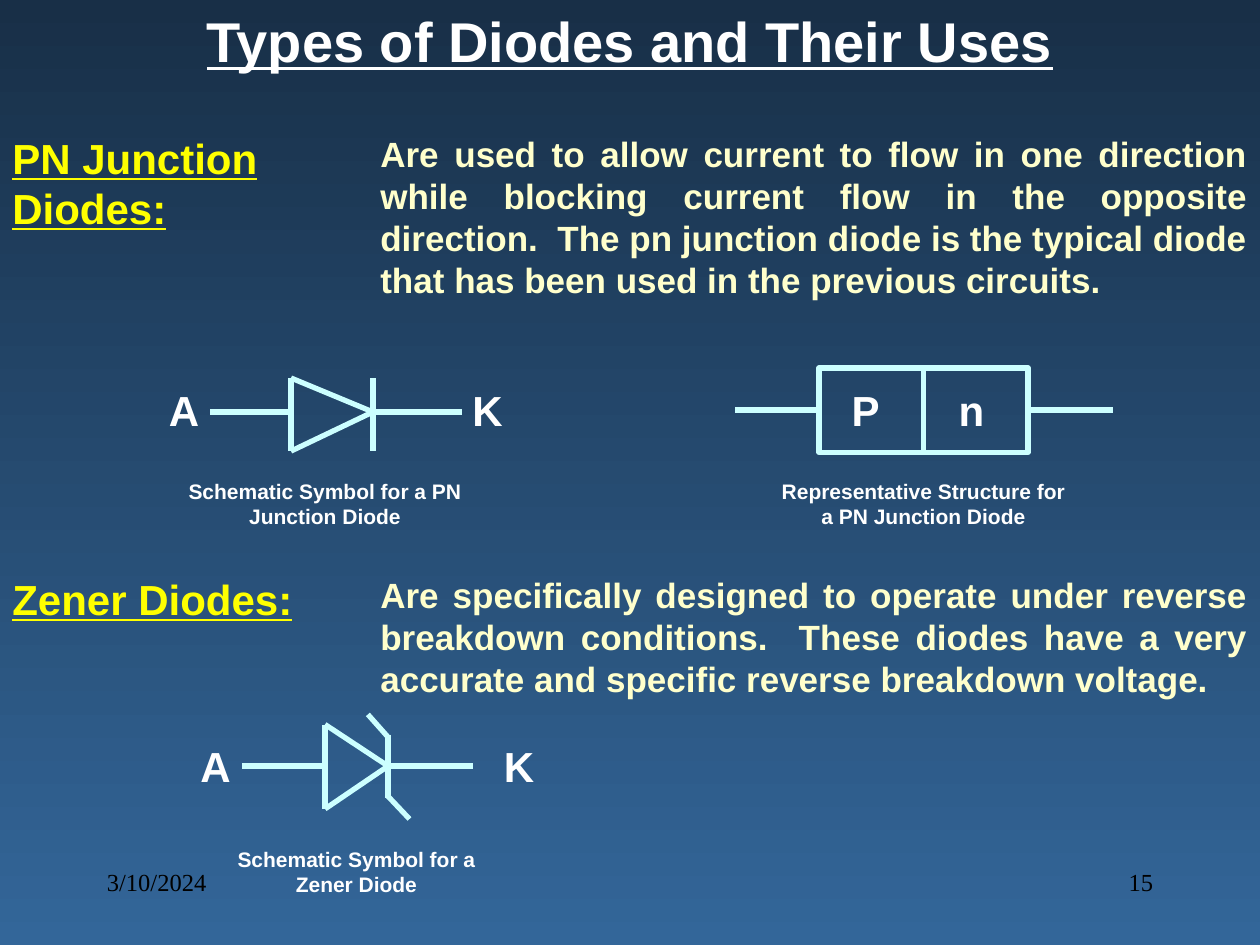
from pptx import Presentation
from pptx.dml.color import RGBColor
from pptx.enum.shapes import MSO_CONNECTOR as Conn, MSO_SHAPE as Shape
from pptx.enum.text import MSO_ANCHOR as Anchor, MSO_AUTO_SIZE as Auto, PP_ALIGN as Al
from pptx.oxml.ns import qn
from pptx.util import Inches, Pt
from lxml.etree import SubElement

WHITE, YELLOW, CREAM, CYAN, BLACK = "FFFFFF", "FFFF00", "FFFFCC", "CCFFFF", "000000"

# Content
TITLE = "Types of Diodes and Their Uses"
TYPES = [  # top, heading, heading height, text, text height
    (1, "PN Junction Diodes:", 0.9,
     "Are used to allow current to flow in one direction while blocking current "
     "flow in the opposite direction.  The pn junction diode is the typical diode "
     "that has been used in the previous circuits.", 1.43),
    (4.5, "Zener Diodes:", 0.5,
     "Are specifically designed to operate under reverse breakdown conditions.  "
     "These diodes have a very accurate and specific reverse breakdown voltage.", 1.1),
]
LABELS = [("A", 1.17, 3), ("K", 3.58, 3), ("P", 6.58, 3), ("n", 7.42, 3),
          ("A", 1.42, 5.83), ("K", 3.83, 5.83)]
CAPTIONS = [("Schematic Symbol for a PN Junction Diode", 1.33, 3.75),
            ("Representative Structure for a PN Junction Diode", 6.08, 3.75),
            ("Schematic Symbol for a Zener Diode", 1.58, 6.67)]
FOOTER = [("3/10/2024", 0.75, Al.LEFT), ("15", 7.17, Al.RIGHT)]

# Diode symbols: wire start, base, tip, wire end; base top, axis, base bottom; bar top, bar bottom
PN = (1.67, 2.31, 2.96, 3.67), (3, 3.27, 3.58), (3, 3.58)
ZENER = (1.92, 2.58, 3.08, 3.75), (5.75, 6.08, 6.42), (5.83, 6.33)
HOOKS = [((3.08, 5.85), (2.92, 5.67)), ((3.25, 6.5), (3.07, 6.31))]
CELL = 6.5, 2.92, 0.83, 0.67
LEAD = 0.67


def color(code):
    return RGBColor.from_string(code)


def write(text, x, y, w, h, shape=None, size=24, tint=WHITE, bold=True,
          under=False, align=Al.CENTER, font="Arial"):
    box = shape or slide.shapes.add_textbox(0, 0, 0, 0)
    box.left, box.top, box.width, box.height = map(Inches, (x, y, w, h))
    frame = box.text_frame
    frame.word_wrap = True
    frame.auto_size = Auto.NONE
    frame.vertical_anchor = Anchor.TOP
    par = frame.paragraphs[0]
    par.alignment = align
    run = par.add_run()
    run.text = text
    face = run.font
    face.name, face.size, face.bold, face.underline = font, Pt(size), bold, under
    face.color.rgb = color(tint)


def stroke(item):
    item.line.color.rgb = color(CYAN)
    item.line.width = Pt(3)


def wire(x1, y1, x2, y2, shapes):
    line = shapes.add_connector(Conn.STRAIGHT, *map(Inches, (x1, y1, x2, y2)))
    stroke(line)
    SubElement(line._element.spPr, qn("a:effectLst"))
    return line


def outline(shape):
    shape.shadow.inherit = False
    shape.fill.background()
    stroke(shape)
    return shape


def diode(xs, ys, bar, shapes):
    start, base, tip, end = xs
    top, mid, low = ys
    for ends in [(start, mid, base, mid), (base, top, base, low),
                 (base, top, tip, mid), (base, low, tip, mid),
                 (tip, mid, end, mid), (tip, bar[0], tip, bar[1])]:
        wire(*ends, shapes)


deck = Presentation()
deck.slide_width, deck.slide_height = Inches(10), Inches(7.5)
slide = deck.slides.add_slide(deck.slide_layouts[5])

# Background
fill = slide.background.fill
fill.gradient()
fill.gradient_angle = 270
for stop, code, pos in zip(fill.gradient_stops, ("182F47", "336699"), (0, 1)):
    stop.color.rgb = color(code)
    stop.position = pos

# Title and diode types
write(TITLE, 1, 0, 8, 0.63, shape=slide.shapes.title, size=32, under=True)
for top, head, head_h, text, text_h in TYPES:
    write(head, 0, top, 2.83, head_h, tint=YELLOW, under=True, align=Al.LEFT)
    write(text, 2.92, top, 7.08, text_h, size=20, tint=CREAM, align=Al.JUSTIFY)

# Schematic symbols
diode(*PN, slide.shapes.add_group_shape().shapes)
diode(*ZENER, slide.shapes)
for (x1, y1), (x2, y2) in HOOKS:
    pen = slide.shapes.build_freeform(Inches(x1), Inches(y1))
    pen.add_line_segments([(Inches(x2), Inches(y2))], close=False)
    outline(pen.convert_to_shape())

# PN structure: two cells with a lead on each outer side
x, y, w, h = CELL
cells = [outline(slide.shapes.add_shape(Shape.RECTANGLE, *map(Inches, (x + i * w, y, w, h))))
         for i in range(2)]
mid = y + h / 2
for cell, site, edge, end in [(cells[0], 1, x, x - LEAD),
                              (cells[1], 3, x + 2 * w, x + 2 * w + LEAD)]:
    wire(edge, mid, end, mid, slide.shapes).begin_connect(cell, site)

# Labels, captions and footer
for text, x, y in LABELS:
    write(text, x, y, 0.58, 0.5)
for text, x, y in CAPTIONS:
    write(text, x, y, 2.5, 0.5, size=12)
for text, x, align in FOOTER:
    write(text, x, 6.83, 2.08, 0.5, size=14, tint=BLACK, bold=False,
          align=align, font="Times New Roman")

deck.save("out.pptx")
